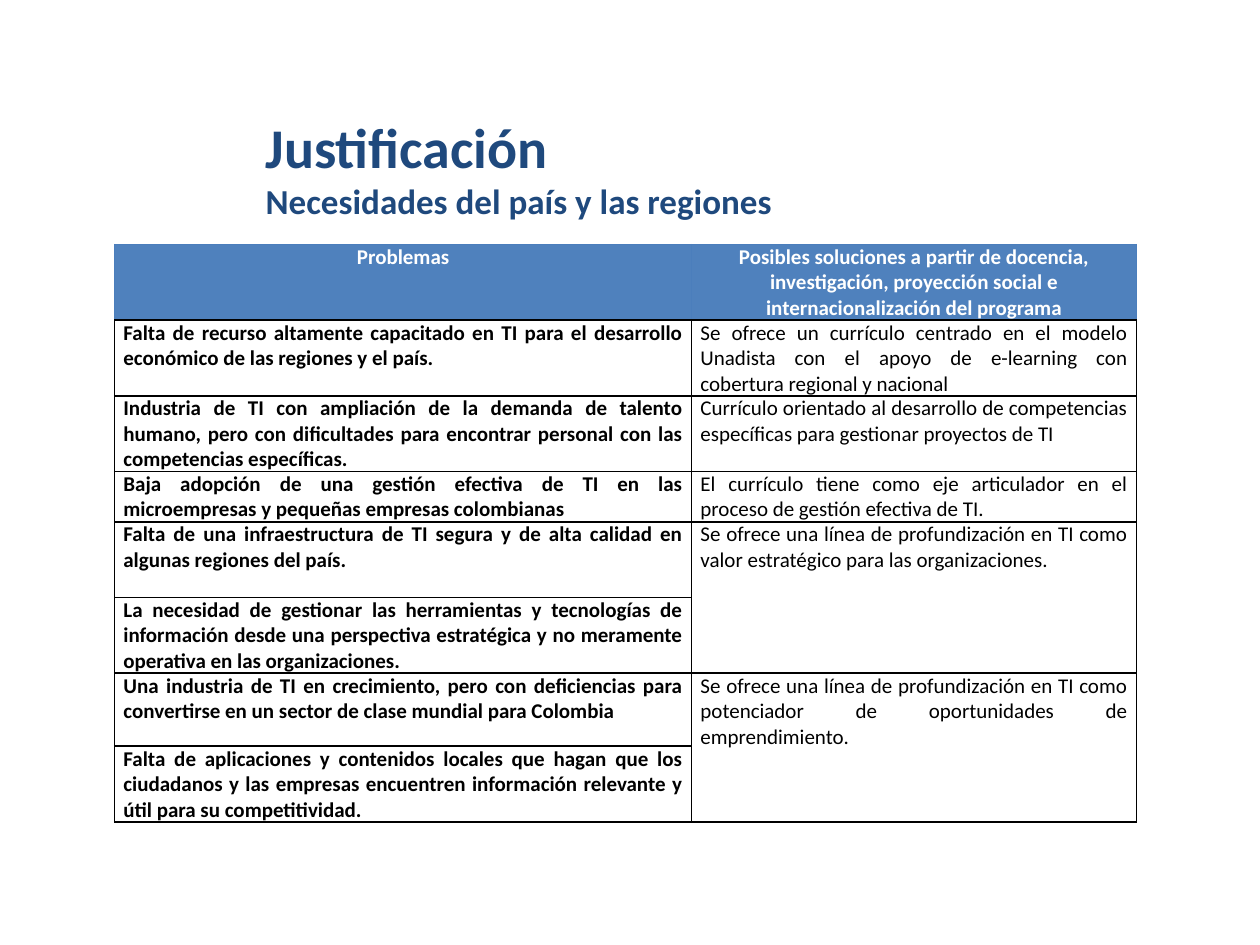
from lxml.etree import SubElement
from pptx import Presentation
from pptx.dml.color import RGBColor
from pptx.enum.text import MSO_AUTO_SIZE, PP_ALIGN
from pptx.oxml.ns import qn
from pptx.util import Inches, Pt

NAVY = RGBColor(0x1F, 0x49, 0x7D)
BLUE = RGBColor(0x4F, 0x81, 0xBD)
EDGE = RGBColor(0x4B, 0x7E, 0xBC)
BLACK = RGBColor(0, 0, 0)
WHITE = RGBColor(255, 255, 255)

TITLES = [("Justificación", 32), ("Necesidades del país y las regiones", 20)]

# Row height, problem, solution (None continues the solution above)
ROWS = [
    (0.6, "Problemas",
     "Posibles soluciones a partir de docencia, investigación, "
     "proyección social e internacionalización del programa"),
    (0.6, "Falta de recurso altamente capacitado en TI para el desarrollo "
     "económico de las regiones y el país.",
     "Se ofrece un currículo centrado en el modelo Unadista con el apoyo "
     "de e-learning con cobertura regional y nacional"),
    (0.6, "Industria de TI con ampliación de la demanda de talento humano, "
     "pero con dificultades para encontrar personal con las "
     "competencias específicas.",
     "Currículo orientado al desarrollo de competencias específicas "
     "para gestionar proyectos de TI"),
    (0.4, "Baja adopción de una gestión efectiva de TI en las "
     "microempresas y pequeñas empresas colombianas",
     "El currículo tiene como eje articulador en el proceso de "
     "gestión efectiva de TI."),
    (0.6, "Falta de una infraestructura de TI segura y de alta calidad en "
     "algunas regiones del país.",
     "Se ofrece una línea de profundización en TI como valor "
     "estratégico para las organizaciones."),
    (0.6, "La necesidad de gestionar las herramientas y tecnologías de "
     "información desde una perspectiva estratégica y no meramente "
     "operativa en las organizaciones.", None),
    (0.58, "Una industria de TI en crecimiento, pero con deficiencias para "
     "convertirse en un sector de clase mundial para Colombia",
     "Se ofrece una línea de profundización en TI como potenciador de "
     "oportunidades de emprendimiento."),
    (0.6, "Falta de aplicaciones y contenidos locales que hagan que los "
     "ciudadanos y las empresas encuentren información relevante y útil "
     "para su competitividad.", None),
]


def style(para, color, **form):
    para.font.color.rgb = color
    for name, value in {"name": "Calibri", "bold": True, **form}.items():
        setattr(para.font, name, value)


def border(cell, sides):
    """Draw the cell's edges; sides maps L, R, T, B to (colour, points)."""
    props = cell._tc.get_or_add_tcPr()
    for side, (color, width) in sides.items():
        line = SubElement(props, qn(f"a:ln{side}"), w=str(Pt(width)))
        fill = SubElement(line, qn("a:solidFill"))
        SubElement(fill, qn("a:srgbClr"), val=str(color))


def heading(slide, left, top, width, height):
    box = slide.shapes.add_textbox(left, top, width, height)
    frame = box.text_frame
    frame.word_wrap = True
    frame.auto_size = MSO_AUTO_SIZE.SHAPE_TO_FIT_TEXT
    for i, (text, size) in enumerate(TITLES):
        para = frame.add_paragraph() if i else frame.paragraphs[0]
        para.text = text
        style(para, NAVY, size=Pt(size))


def fill_cell(cell, text, head, bold):
    for side in ("left", "right"):
        setattr(cell, f"margin_{side}", Inches(0.07))
    cell.margin_top = cell.margin_bottom = 0
    edge = (EDGE, 0.75) if head else (BLACK, 1)
    border(cell, {"L": edge, "R": edge, "T": edge, "B": (BLACK, 1)})
    cell.fill.solid()
    cell.fill.fore_color.rgb = BLUE if head else WHITE
    para = cell.text_frame.paragraphs[0]
    para.text = text or ""
    para.alignment = PP_ALIGN.CENTER if head else PP_ALIGN.JUSTIFY
    style(para, WHITE if head else BLACK, size=Pt(12), bold=bold)


def needs(slide, left, top, width, height):
    grid = slide.shapes.add_table(len(ROWS), 2, left, top, width, height).table
    grid.horz_banding = False
    grid.columns[0].width = Inches(4.58)
    grid.columns[1].width = width - Inches(4.58)
    for i, (tall, *texts) in enumerate(ROWS):
        grid.rows[i].height = Inches(tall)
        for j, text in enumerate(texts):
            fill_cell(grid.cell(i, j), text, i == 0, i == 0 or j == 0)
        # A missing solution joins the one above
        if texts[1] is None:
            grid.cell(i - 1, 1).merge(grid.cell(i, 1))


def main():
    deck = Presentation()
    deck.slide_width, deck.slide_height = Inches(10), Inches(7.5)
    slide = deck.slides.add_slide(deck.slide_layouts[6])
    heading(slide, Inches(2.01), Inches(0.84), Inches(4.57), Inches(0.98))
    needs(slide, Inches(0.91), Inches(1.94), Inches(8.11), Inches(4.58))
    deck.save("out.pptx")


if __name__ == "__main__":
    main()
